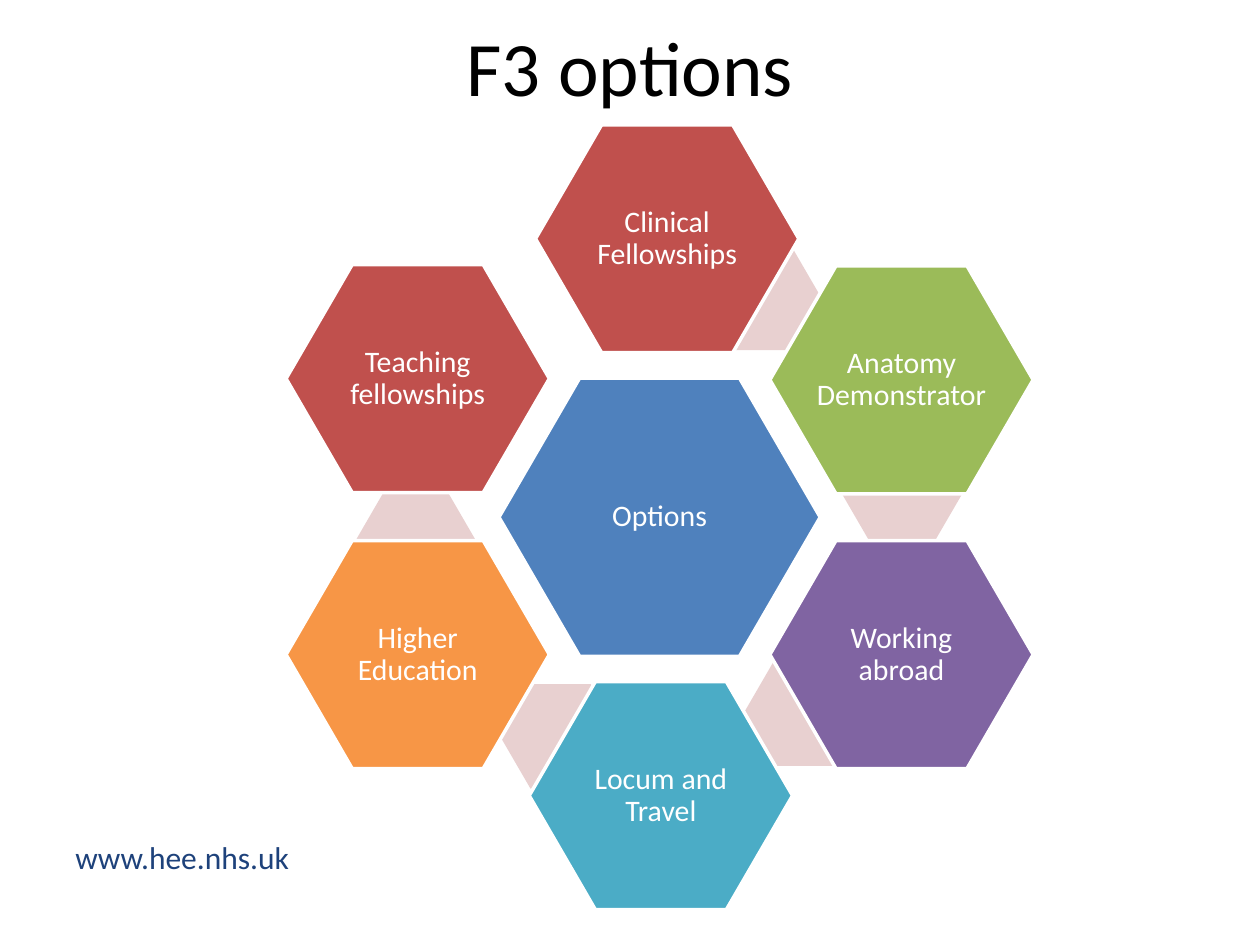
"""Build the F3 options slide: a ring of hexagons round a central one."""
from pptx import Presentation
from pptx import util as u
from pptx.dml.color import RGBColor
from pptx.enum import shapes, text

THEME = {
    "font": "Calibri", "ink": "000000", "site": "1E427B", "pale": "FFFFFF",
    "link": "E8D0D0", "core": "4F81BD", "red": "C0504D", "green": "9BBB59",
    "plum": "8064A2", "teal": "4BACC6", "gold": "F79646",
    "title": 44, "foot": 18, "label": 17,
}
TITLE = "F3 options"
SITE = "www.hee.nhs.uk"
CORE = ("Options", "core", (3.96, 3))
RING = [
    ("Clinical Fellowships", "red", (4.25, 0.99), (5.56, 1.95)),
    ("Anatomy Demonstrator", "green", (6.11, 2.11), (6.68, 3.5)),
    ("Working abroad", "plum", (6.11, 4.29), (5.9, 5.25)),
    ("Locum and Travel", "teal", (4.2, 5.41), (3.97, 5.43)),
    ("Higher Education", "gold", (2.27, 4.29), (2.82, 3.88)),
    ("Teaching fellowships", "red", (2.27, 2.1), None),
]
BIG, MID, SMALL = (2.55, 2.21), (2.09, 1.81), (0.96, 0.83)


def color(name):
    return RGBColor.from_string(THEME[name])


def write(frame, words, size, ink, align):
    frame.text = words
    para = frame.paragraphs[0]
    para.alignment = align
    para.font.name = THEME["font"]
    para.font.size = u.Pt(THEME[size])
    para.font.color.rgb = color(ink)
    return para


def hexagon(slide, spot, size, fill):
    box = [u.Inches(n) for n in spot + size]
    shape = slide.shapes.add_shape(shapes.MSO_SHAPE.HEXAGON, *box)
    shape.shadow.inherit = False
    shape.adjustments[0] = 0.29
    shape.fill.solid()
    shape.fill.fore_color.rgb = color(fill)
    shape.line.fill.background()
    return shape


def option(slide, words, fill, spot, size):
    shape = hexagon(slide, spot, size, fill)
    shape.line.color.rgb = color("pale")
    shape.line.width = u.Pt(2)
    frame = shape.text_frame
    frame.word_wrap = True
    frame.vertical_anchor = text.MSO_ANCHOR.MIDDLE
    frame.margin_left = frame.margin_right = u.Inches(0.02)
    frame.margin_top = frame.margin_bottom = u.Inches(0.02)
    para = write(frame, words, "label", "pale", text.PP_ALIGN.CENTER)
    para.line_spacing = 0.9


def main():
    deck = Presentation()
    deck.slide_width, deck.slide_height = u.Inches(10), u.Inches(7.5)
    slide = deck.slides.add_slide(deck.slide_layouts[5])

    title = slide.shapes.title
    title.left, title.top = u.Inches(0.5), u.Inches(0.1)
    title.width, title.height = u.Inches(9), u.Inches(0.85)
    title.text_frame.vertical_anchor = text.MSO_ANCHOR.MIDDLE
    write(title.text_frame, TITLE, "title", "ink", text.PP_ALIGN.CENTER)

    place = [u.Inches(n) for n in (0.5, 6.6, 2.05, 0.4)]
    site = slide.shapes.add_textbox(*place)
    site.text_frame.word_wrap = False
    write(site.text_frame, SITE, "foot", "site", text.PP_ALIGN.LEFT)

    option(slide, *CORE, BIG)
    for words, fill, spot, link in RING:
        if link:
            hexagon(slide, link, SMALL, "link")
    for words, fill, spot, link in RING:
        option(slide, words, fill, spot, MID)
    deck.save("out.pptx")


if __name__ == "__main__":
    main()
